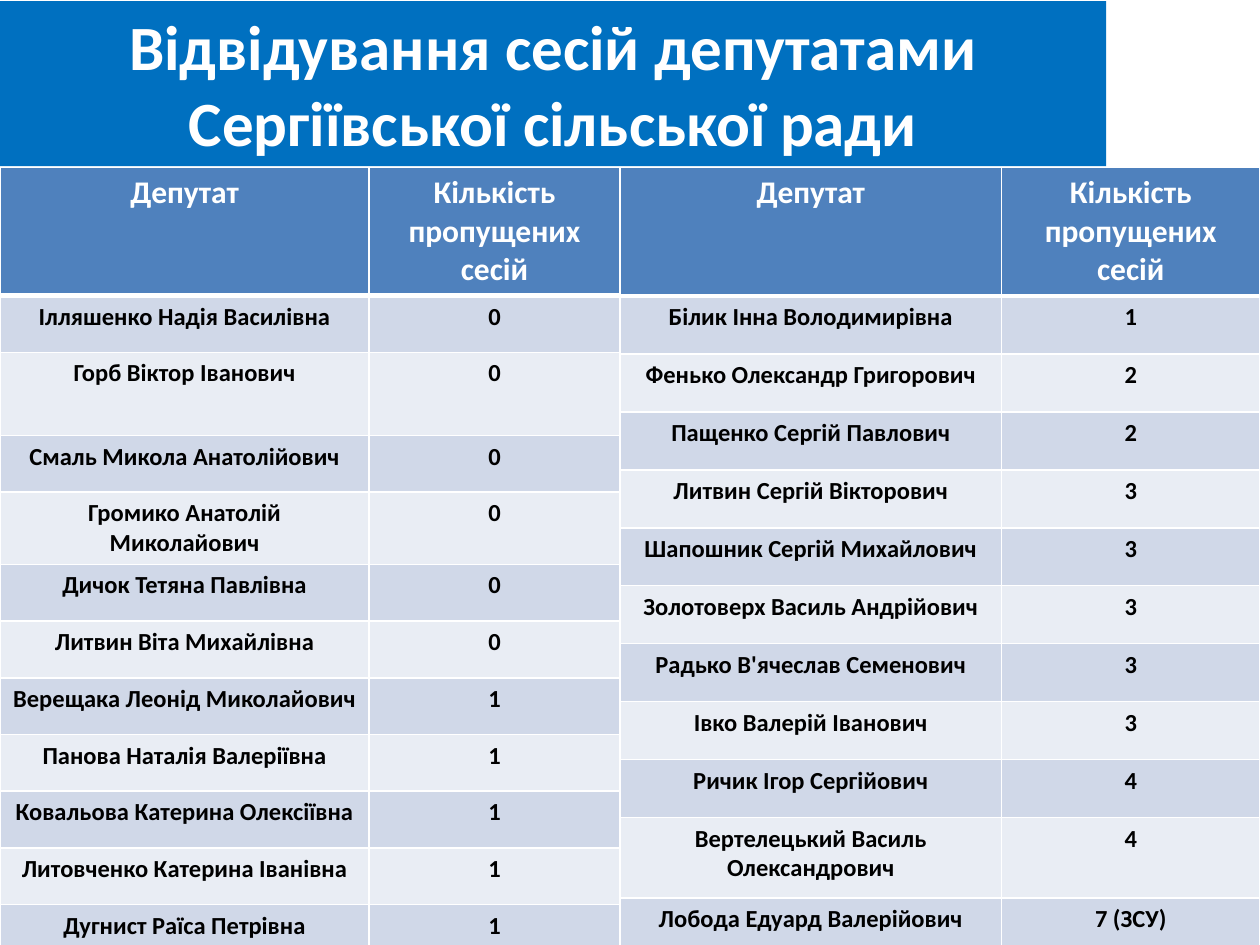
from lxml import etree
from pptx import Presentation
from pptx import util as u
from pptx.dml.color import RGBColor
from pptx.enum import shapes, text
from pptx.oxml import ns

WHITE = RGBColor(0xFF, 0xFF, 0xFF)
BLACK = RGBColor(0, 0, 0)
BLUE = RGBColor(0x00, 0x70, 0xC0)
HEAD = RGBColor(0x4F, 0x81, 0xBD)
BANDS = [RGBColor(0xD0, 0xD8, 0xE8), RGBColor(0xE9, 0xED, 0xF4)]
FONT = "Calibri"

TITLE = "Відвідування сесій депутатами Сергіївської сільської ради"
HEADER = ("Депутат", "Кількість пропущених сесій")
LEFT = [
    ("Ілляшенко Надія Василівна", "0"),
    ("Горб Віктор Іванович", "0"),
    ("Смаль Микола Анатолійович", "0"),
    ("Громико Анатолій Миколайович", "0"),
    ("Дичок Тетяна Павлівна", "0"),
    ("Литвин Віта Михайлівна", "0"),
    ("Верещака Леонід Миколайович", "1"),
    ("Панова Наталія Валеріївна", "1"),
    ("Ковальова Катерина Олексіївна", "1"),
    ("Литовченко Катерина Іванівна", "1"),
    ("Дугнист Раїса Петрівна", "1"),
]
RIGHT = [
    ("Білик Інна Володимирівна", "1"),
    ("Фенько Олександр Григорович", "2"),
    ("Пащенко Сергій Павлович", "2"),
    ("Литвин Сергій Вікторович", "3"),
    ("Шапошник Сергій Михайлович", "3"),
    ("Золотоверх Василь Андрійович", "3"),
    ("Радько В'ячеслав Семенович", "3"),
    ("Івко Валерій Іванович", "3"),
    ("Ричик Ігор Сергійович", "4"),
    ("Вертелецький Василь Олександрович", "4"),
    ("Лобода Едуард Валерійович", "7 (ЗСУ)"),
]
TABLES = [
    dict(rows=LEFT, x=0, cols=(2.93, 1.99), head=1, row=0.45, tall={2: 0.66, 4: 0.57}),
    dict(rows=RIGHT, x=4.92, cols=(3.03, 2.05), head=1.02, row=0.46, tall={10: 0.64}),
]
TOP = 1.33


def write(frame, words, size, color):
    par = frame.paragraphs[0]
    par.alignment = text.PP_ALIGN.CENTER
    run = par.add_run()
    run.text = words
    font = run.font
    font.name, font.size, font.bold = FONT, u.Pt(size), True
    font.color.rgb = color


def border(cell, first):
    props = cell._tc.get_or_add_tcPr()
    for i, side in enumerate(("lnL", "lnR", "lnT", "lnB")):
        width = 3 if first and side == "lnB" else 1
        line = etree.Element(ns.qn("a:" + side), w=str(u.Pt(width)))
        fill = etree.SubElement(line, ns.qn("a:solidFill"))
        etree.SubElement(fill, ns.qn("a:srgbClr"), val=str(WHITE))
        props.insert(i, line)


def add_table(slide, rows, x, cols, head, row, tall):
    data = [HEADER] + rows
    highs = [head] + [tall.get(i, row) for i in range(1, len(data))]
    frame = slide.shapes.add_table(
        len(data), len(cols), u.Inches(x), u.Inches(TOP),
        u.Inches(sum(cols)), u.Inches(sum(highs)))
    table = frame.table
    for col, wide in zip(table.columns, cols):
        col.width = u.Inches(wide)
    for r, (line, high) in enumerate(zip(data, highs)):
        table.rows[r].height = u.Inches(high)
        first = r == 0
        for c, words in enumerate(line):
            cell = table.cell(r, c)
            cell.fill.solid()
            cell.fill.fore_color.rgb = HEAD if first else BANDS[(r - 1) % 2]
            border(cell, first)
            write(cell.text_frame, words, 18 if first else 14, WHITE if first else BLACK)


def add_title(slide):
    box = slide.shapes.add_shape(
        shapes.MSO_SHAPE.RECTANGLE, 0, u.Inches(0.01), u.Inches(8.78), u.Inches(1.31))
    box.shadow.inherit = False
    box.fill.solid()
    box.fill.fore_color.rgb = BLUE
    box.line.fill.background()
    frame = box.text_frame
    frame.word_wrap = True
    frame.auto_size = text.MSO_AUTO_SIZE.SHAPE_TO_FIT_TEXT
    frame.vertical_anchor = text.MSO_ANCHOR.TOP
    write(frame, TITLE, 36, WHITE)


def main():
    deck = Presentation()
    deck.slide_width, deck.slide_height = u.Inches(10), u.Inches(7.5)
    slide = deck.slides.add_slide(deck.slide_layouts[6])
    left, right = TABLES
    add_table(slide, **left)
    add_title(slide)
    add_table(slide, **right)
    deck.save("out.pptx")


if __name__ == "__main__":
    main()
